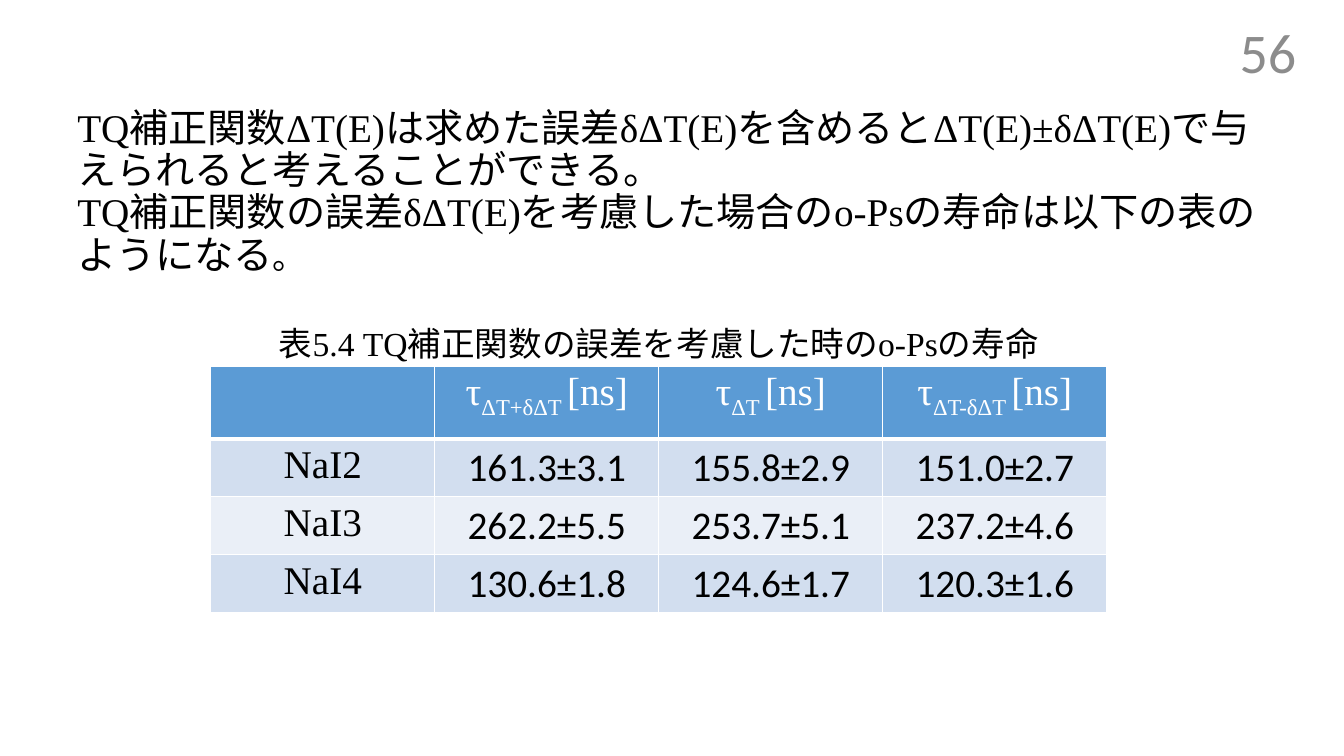
import pptx
import pptx.util
import pptx.dml.color
import pptx.enum.text
import pptx.oxml

Pt = pptx.util.Pt
ALIGN = pptx.enum.text.PP_ALIGN
ANCHOR = pptx.enum.text.MSO_ANCHOR
SERIF, SANS = "Times New Roman", "Calibri"
COLORS = {"text": "000000", "number": "8C8C8C", "white": "FFFFFF",
          "header": "5B9BD5", "odd": "D2DEEF", "even": "EAEFF7"}

# Content
TITLE_LINES = [
    "TQ補正関数ΔT(E)は求めた誤差δΔT(E)を含めるとΔT(E)±δΔT(E)で与えられると考えることができる。",
    "TQ補正関数の誤差δΔT(E)を考慮した場合のo-Psの寿命は以下の表のようになる",
]
TITLE_END = "。"
CAPTION = "表5.4 TQ補正関数の誤差を考慮した時のo-Psの寿命"
PAGE_NUMBER = "56"
SUBSCRIPTS = ["ΔT+δΔT ", "ΔT ", "ΔT-δΔT "]
LIFETIMES = [
    ("NaI2", "161.3±3.1", "155.8±2.9", "151.0±2.7"),
    ("NaI3", "262.2±5.5", "253.7±5.1", "237.2±4.6"),
    ("NaI4", "130.6±1.8", "124.6±1.7", "120.3±1.6"),
]

# Layout in points
TABLE_LEFT, TABLE_TOP, TABLE_WIDTH = 150.6, 261.4, 640
HEADER_HEIGHT, ROW_HEIGHT = 52, 41


def style(font, size, name, color):
    font.size, font.name = Pt(size), name
    font.color.rgb = pptx.dml.color.RGBColor.from_string(COLORS[color])


def add_label(box, text, size, name, color, align, anchor):
    frame = slide.shapes.add_textbox(*map(Pt, box)).text_frame
    frame.word_wrap, frame.vertical_anchor = True, anchor
    line = frame.paragraphs[0]
    line.text, line.alignment = text, align
    style(line.font, size, name, color)


def format_cell(cell, fill, top, bottom):
    cell.margin_left = cell.margin_right = Pt(9.6)
    cell.margin_top = cell.margin_bottom = Pt(3.6)
    properties = cell._tc.get_or_add_tcPr()
    for side, width in (("L", 1), ("R", 1), ("T", top), ("B", bottom)):
        properties.append(pptx.oxml.parse_xml(
            f'<a:ln{side} xmlns:a="http://schemas.openxmlformats.org/drawingml/2006/main" '
            f'w="{Pt(width)}"><a:solidFill><a:srgbClr val="{COLORS["white"]}"/>'
            f'</a:solidFill></a:ln{side}>'))
    cell.fill.solid()
    cell.fill.fore_color.rgb = pptx.dml.color.RGBColor.from_string(COLORS[fill])


deck = pptx.Presentation()
deck.slide_width, deck.slide_height = Pt(960), Pt(540)
slide = deck.slides.add_slide(deck.slide_layouts[5])

# Title with the explanation
title = slide.shapes.title
title.left, title.top, title.width, title.height = map(Pt, (48, 67.7, 864, 140.4))
title.text_frame.word_wrap = True
title.text_frame.auto_size = pptx.enum.text.MSO_AUTO_SIZE.NONE
title.text_frame.vertical_anchor = ANCHOR.MIDDLE
explanation = title.text_frame.paragraphs[0]
explanation.alignment, explanation.line_spacing = ALIGN.LEFT, 0.9
style(explanation.font, 28, SERIF, "text")
for index, sentence in enumerate(TITLE_LINES):
    if index:
        explanation.add_line_break()
    explanation.add_run().text = sentence
full_stop = explanation.add_run()
full_stop.text, full_stop.font.size = TITLE_END, Pt(24)

# Lifetime table
table = slide.shapes.add_table(
    len(LIFETIMES) + 1, len(SUBSCRIPTS) + 1, Pt(TABLE_LEFT), Pt(TABLE_TOP),
    Pt(TABLE_WIDTH), Pt(HEADER_HEIGHT + ROW_HEIGHT * len(LIFETIMES))).table
table.first_row = table.horz_banding = False
for index, row in enumerate(table.rows):
    row.height = Pt(ROW_HEIGHT if index else HEADER_HEIGHT)

for column, subscript in enumerate([None] + SUBSCRIPTS):
    cell = table.cell(0, column)
    format_cell(cell, "header", 1, 3)
    heading = cell.text_frame.paragraphs[0]
    heading.alignment = ALIGN.CENTER
    style(heading.font, 28, SERIF, "white")
    if subscript:
        for text in ("τ", subscript, "[ns]"):
            run = heading.add_run()
            run.text = text
            if text == subscript:
                run._r.get_or_add_rPr().set("baseline", "-25000")

for row, values in enumerate(LIFETIMES, 1):
    for column, value in enumerate(values):
        cell = table.cell(row, column)
        format_cell(cell, "odd" if row % 2 else "even", 3 if row == 1 else 1, 1)
        entry = cell.text_frame.paragraphs[0]
        entry.text, entry.alignment = value, ALIGN.CENTER
        style(entry.font, 28, SANS if column else SERIF, "text")

# Caption and page number
add_label((TABLE_LEFT, 226.8, TABLE_WIDTH, 36), CAPTION, 24, SERIF, "text",
          ALIGN.CENTER, ANCHOR.TOP)
add_label((717, 22.3, 216, 28.8), PAGE_NUMBER, 40, SANS, "number",
          ALIGN.RIGHT, ANCHOR.MIDDLE)

deck.save("out.pptx")
